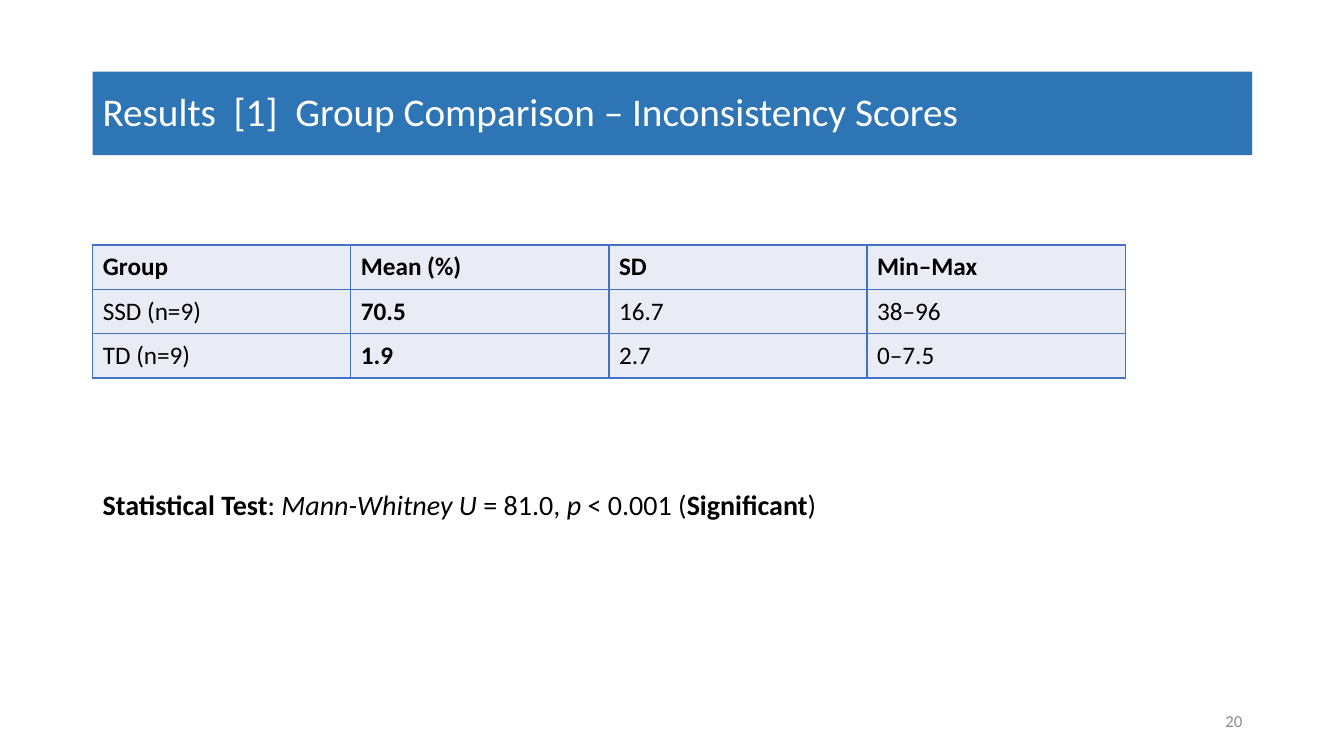
"""Build the slide comparing inconsistency scores between groups."""
from lxml.etree import SubElement
from pptx import Presentation
from pptx.dml.color import RGBColor
from pptx.enum.shapes import MSO_SHAPE
from pptx.enum.text import MSO_ANCHOR, PP_ALIGN
from pptx.oxml.ns import qn
from pptx.util import Inches, Pt

LEFT = 0.92
COL_W, ROW_H = 2.56, 0.44
SCORES = [
    ["Group", "Mean (%)", "SD", "Min–Max"],
    ["SSD (n=9)", "70.5", "16.7", "38–96"],
    ["TD (n=9)", "1.9", "2.7", "0–7.5"],
]
TEST_RESULT = [
    ("Statistical Test", "b"), (": ", ""), ("Mann-Whitney U", "i"),
    (" = 81.0, ", ""), ("p", "i"), (" < 0.001 (", ""),
    ("Significant", "b"), (")", ""),
]


def rgb(color):
    """Turn a hex string into a colour."""
    return RGBColor.from_string(color)


def style(font, size, color="000000", bold=False, italic=False):
    """Set the look of a font."""
    font.name, font.size = "Calibri", Pt(size)
    font.bold, font.italic = bold, italic
    font.color.rgb = rgb(color)


def add_text(s, box, runs, size, color="000000", align=PP_ALIGN.LEFT,
             anchor=MSO_ANCHOR.TOP):
    """Add a text box of one paragraph with bold and italic runs."""
    tf = s.shapes.add_textbox(*map(Inches, box)).text_frame
    tf.word_wrap, tf.vertical_anchor = True, anchor
    p = tf.paragraphs[0]
    p.alignment = align
    for text, marks in runs:
        r = p.add_run()
        r.text = text
        style(r.font, size, color, "b" in marks, "i" in marks)


def add_title(s, box, text):
    """Add the title band."""
    sp = s.shapes.add_shape(MSO_SHAPE.RECTANGLE, *map(Inches, box))
    sp.shadow.inherit = False
    sp.fill.solid()
    sp.fill.fore_color.rgb = rgb("2E75B6")
    sp.line.fill.background()
    tf = sp.text_frame
    tf.text = text
    tf.word_wrap, tf.vertical_anchor = True, MSO_ANCHOR.MIDDLE
    p = tf.paragraphs[0]
    p.alignment, p.line_spacing = PP_ALIGN.LEFT, 0.9
    style(p.runs[0].font, 28, "FFFFFF")


def set_borders(cell, color, width):
    """Draw all four borders of a cell ahead of its fill."""
    props = cell._tc.get_or_add_tcPr()
    for side in ("a:lnL", "a:lnR", "a:lnT", "a:lnB"):
        line = SubElement(props, qn(side), w=str(Pt(width)))
        fill = SubElement(line, qn("a:solidFill"))
        SubElement(fill, qn("a:srgbClr"), val=color)


def add_scores(s, left, top, rows):
    """Add the score table with bold headings and means."""
    n_rows, n_cols = len(rows), len(rows[0])
    size = (left, top, n_cols * COL_W, n_rows * ROW_H)
    table = s.shapes.add_table(n_rows, n_cols, *map(Inches, size)).table
    for i, row in enumerate(rows):
        for j, text in enumerate(row):
            cell = table.cell(i, j)
            cell.text = text
            cell.vertical_anchor = MSO_ANCHOR.MIDDLE
            set_borders(cell, "4472C4", 1)
            cell.fill.solid()
            cell.fill.fore_color.rgb = rgb("E9EBF5")
            r = cell.text_frame.paragraphs[0].runs[0]
            style(r.font, 18, bold=i == 0 or j == 1)


def main():
    """Build and save the slide."""
    prs = Presentation()
    prs.slide_width, prs.slide_height = Inches(13.33), Inches(7.5)
    s = prs.slides.add_slide(prs.slide_layouts[6])
    add_scores(s, LEFT, 2.43, SCORES)
    add_text(s, (9.42, 6.95, 3, 0.4), [("20", "")], 12, "8C8C8C",
             PP_ALIGN.RIGHT, MSO_ANCHOR.MIDDLE)
    add_title(s, (LEFT, 0.71, 11.5, 0.83),
              "Results  [1]  Group Comparison – Inconsistency Scores")
    add_text(s, (LEFT, 4.79, 8.5, 0.44), TEST_RESULT, 20)
    prs.save("out.pptx")


if __name__ == "__main__":
    main()
